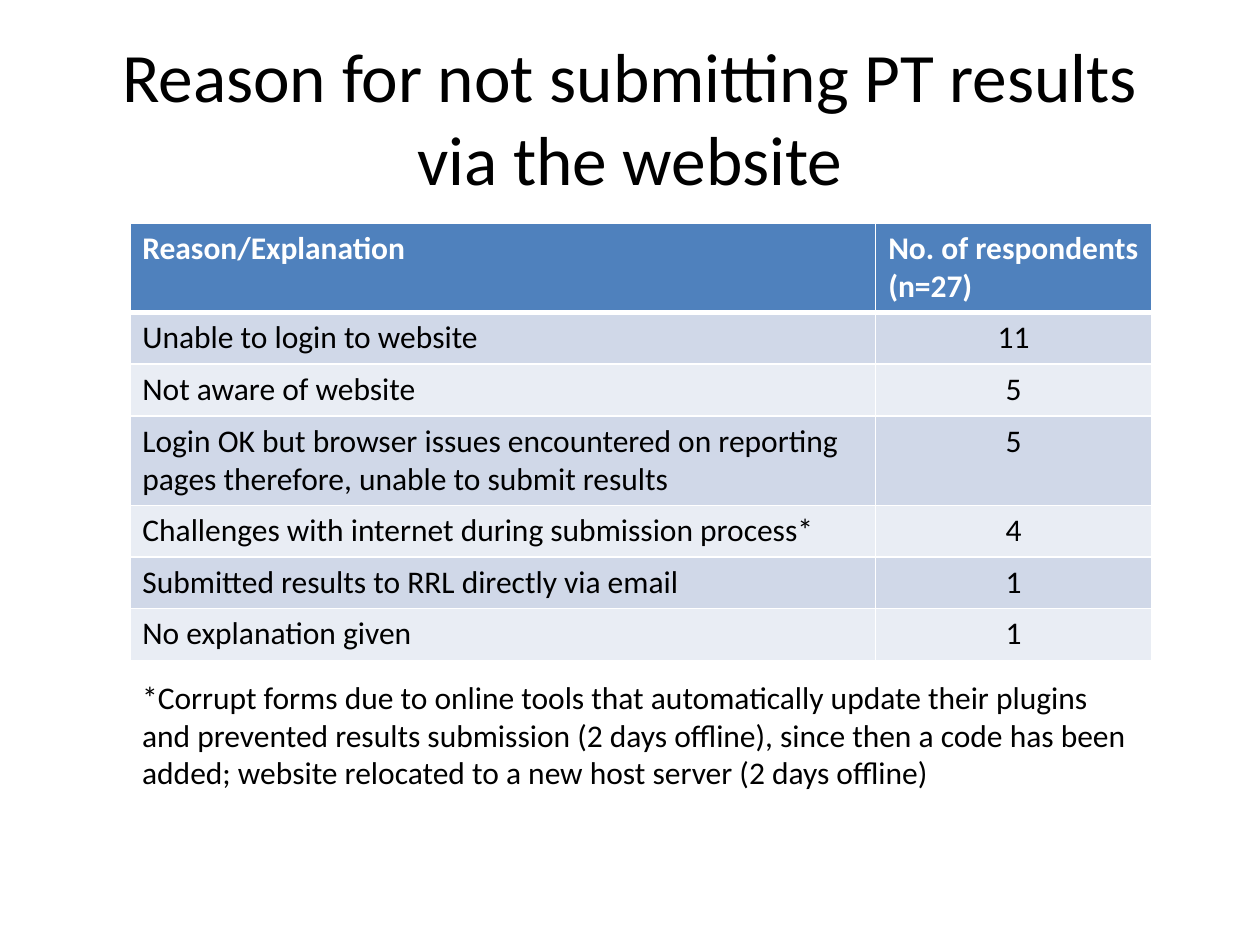
from pptx import Presentation
from pptx.dml.color import RGBColor
from pptx.enum.text import MSO_ANCHOR, PP_ALIGN
from pptx.oxml import parse_xml
from pptx.oxml.ns import nsdecls
from pptx.util import Inches, Pt

CENTER, LEFT = PP_ALIGN.CENTER, PP_ALIGN.LEFT
MIDDLE = MSO_ANCHOR.MIDDLE
FONT = "Calibri"
BLACK, WHITE = "000000", "FFFFFF"
HEADER_FILL, BANDS = "4F81BD", ("D0D8E8", "E9EDF4")
TITLE = "Reason for not submitting PT results via the website"
ROWS = [
    ("Reason/Explanation", "No. of respondents (n=27)"),
    ("Unable to login to website", "11"),
    ("Not aware of website", "5"),
    ("Login OK but browser issues encountered on reporting pages "
     "therefore, unable to submit results", "5"),
    ("Challenges with internet during submission process*", "4"),
    ("Submitted results to RRL directly via email", "1"),
    ("No explanation given", "1"),
]
FOOTNOTE = ("*Corrupt forms due to online tools that automatically update their "
            "plugins and prevented results submission (2 days offline), since then "
            "a code has been added; website relocated to a new host server "
            "(2 days offline)")


def color(value):
    """Turn a hex string into a colour."""
    return RGBColor.from_string(value)


def write(frame, text, size, hue=BLACK, bold=False, align=LEFT):
    """Put one formatted paragraph into a text frame."""
    frame.text = text
    paragraph = frame.paragraphs[0]
    paragraph.alignment = align
    font = paragraph.font
    font.name, font.size, font.bold = FONT, Pt(size), bold
    font.color.rgb = color(hue)


def add_borders(cell, top, bottom):
    """Draw white cell borders with the given top and bottom widths in points."""
    properties = cell._tc.get_or_add_tcPr()
    for side, width in (("L", 1), ("R", 1), ("T", top), ("B", bottom)):
        properties.append(parse_xml(
            f'<a:ln{side} {nsdecls("a")} w="{Pt(width)}"><a:solidFill>'
            f'<a:srgbClr val="{WHITE}"/></a:solidFill></a:ln{side}>'))


def add_title(slide):
    """Place and format the slide title."""
    title = slide.shapes.title
    title.left, title.top = Inches(0.5), Inches(0.3)
    title.width, title.height = Inches(9), Inches(1.25)
    title.text_frame.word_wrap = True
    title.text_frame.vertical_anchor = MIDDLE
    write(title.text_frame, TITLE, 39.6, align=CENTER)


def add_reason_table(slide):
    """Add the banded table of reasons and respondent counts."""
    row_height = Inches(0.41)
    table = slide.shapes.add_table(
        len(ROWS), 2, Inches(1.03), Inches(1.77), Inches(8.11),
        row_height * len(ROWS)).table
    for column, width in zip(table.columns, (5.92, 2.19)):
        column.width = Inches(width)
    for row_index, texts in enumerate(ROWS):
        header = row_index == 0
        table.rows[row_index].height = row_height
        fill = HEADER_FILL if header else BANDS[(row_index - 1) % 2]
        for column_index, text in enumerate(texts):
            cell = table.cell(row_index, column_index)
            add_borders(cell, 3 if row_index == 1 else 1, 3 if header else 1)
            cell.fill.solid()
            cell.fill.fore_color.rgb = color(fill)
            align = CENTER if column_index and not header else LEFT
            write(cell.text_frame, text, 18, WHITE if header else BLACK,
                  header, align)


def add_footnote(slide):
    """Add the explanatory note under the table."""
    box = slide.shapes.add_textbox(
        Inches(1.03), Inches(5.33), Inches(8.03), Inches(1.31))
    box.text_frame.word_wrap = True
    write(box.text_frame, FOOTNOTE, 18)


def main():
    """Build and save the deck."""
    deck = Presentation()
    deck.slide_width, deck.slide_height = Inches(10), Inches(7.5)
    slide = deck.slides.add_slide(deck.slide_layouts[5])
    add_title(slide)
    add_reason_table(slide)
    add_footnote(slide)
    deck.save("out.pptx")


if __name__ == "__main__":
    main()
